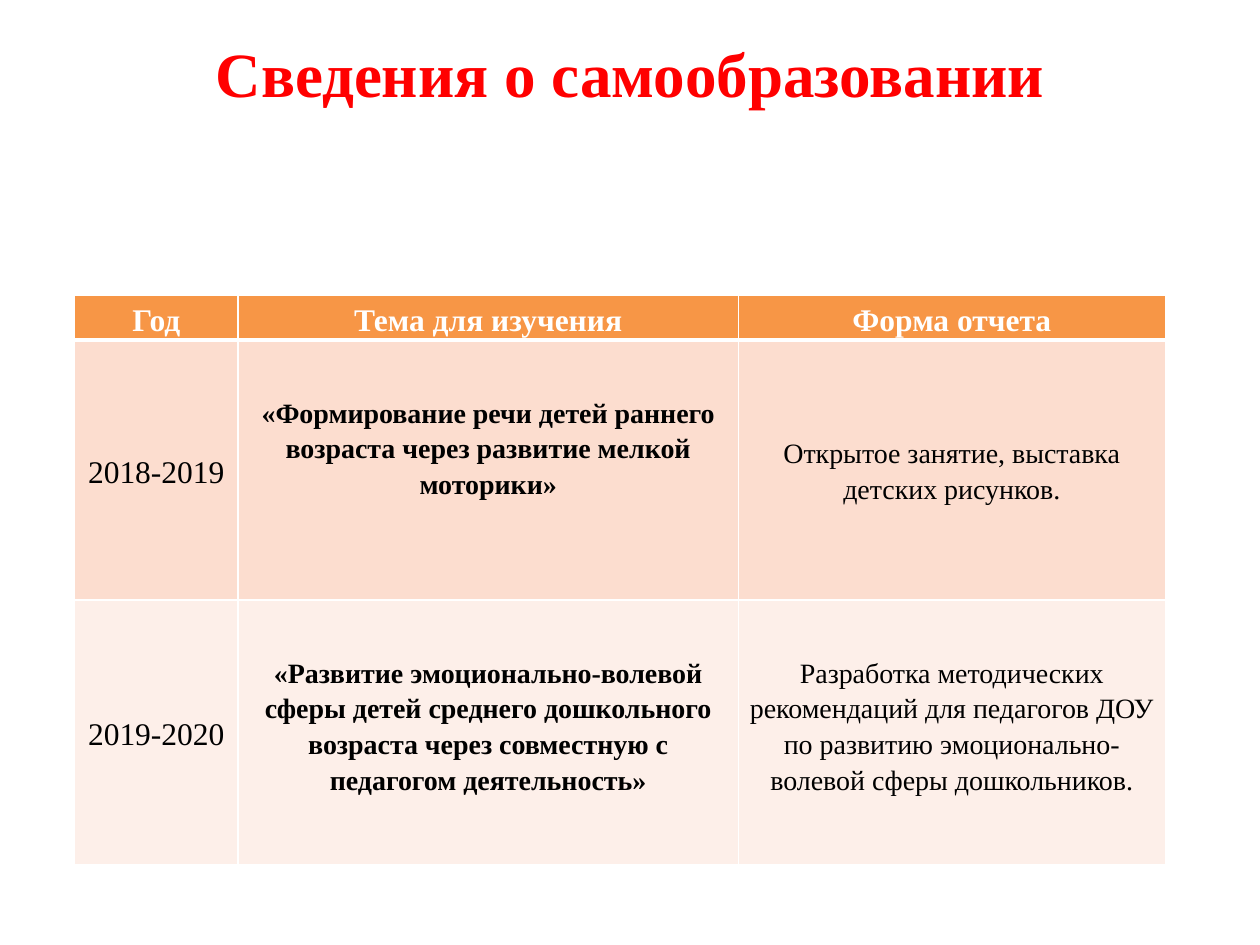
"""Build a slide with a title and a table of self-education topics."""
from dataclasses import dataclass

from pptx import Presentation
from pptx import util as u
from pptx.dml.color import RGBColor
from pptx.enum import text
from pptx.oxml import parse_xml
from pptx.oxml.ns import nsdecls


@dataclass(frozen=True)
class Theme:
    """Colours, font and type sizes of the slide."""
    font: str = "Times New Roman"
    title: str = "FF0000"
    header: str = "F79646"
    bands: tuple = ("FCDDCF", "FDEFE9")
    light: str = "FFFFFF"
    dark: str = "000000"
    title_size: int = 36
    label_size: int = 18
    body_size: int = 16


THEME = Theme()
COLUMNS = (93.6, 285.8, 244.1)
ROWS = (25.2, 148.7, 151.2)
TOP_INSET = 30.6
HEADINGS = ("Год", "Тема для изучения", "Форма отчета")
TOPICS = (
    ("2018-2019",
     "«Формирование речи детей раннего возраста через развитие мелкой моторики»",
     "Открытое занятие, выставка детских рисунков."),
    ("2019-2020",
     "«Развитие эмоционально-волевой сферы детей среднего дошкольного возраста "
     "через совместную с педагогом деятельность»",
     "Разработка методических рекомендаций для педагогов ДОУ по развитию "
     "эмоционально-волевой сферы дошкольников."),
)


def format_paragraph(p, size, color, bold):
    """Centre a paragraph and set its font."""
    p.alignment = text.PP_ALIGN.CENTER
    p.font.name = THEME.font
    p.font.size = u.Pt(size)
    p.font.bold = bold
    p.font.color.rgb = RGBColor.from_string(color)


def add_title(s, wording):
    """Place the title across the top of the slide."""
    sp = s.shapes.title
    sp.left, sp.top, sp.width, sp.height = u.Pt(0), u.Pt(0), u.Pt(720), u.Pt(82.8)
    tf = sp.text_frame
    tf.text = wording
    tf.vertical_anchor = text.MSO_ANCHOR.MIDDLE
    format_paragraph(tf.paragraphs[0], THEME.title_size, THEME.title, True)


def set_borders(cell, top, bottom):
    """Draw light borders round a cell, with the given top and bottom widths."""
    tcPr = cell._tc.get_or_add_tcPr()
    for side, width in (("L", 1), ("R", 1), ("T", top), ("B", bottom)):
        tcPr.append(parse_xml(
            f'<a:ln{side} {nsdecls("a")} w="{u.Pt(width)}"><a:solidFill>'
            f'<a:srgbClr val="{THEME.light}"/></a:solidFill></a:ln{side}>'))


def fill_cell(cell, wording, fill, size, color, bold=False, top_inset=0, rules=(1, 1)):
    """Write and format one table cell."""
    set_borders(cell, *rules)
    cell.fill.solid()
    cell.fill.fore_color.rgb = RGBColor.from_string(fill)
    cell.margin_left = cell.margin_right = u.Pt(4.5)
    cell.margin_top, cell.margin_bottom = u.Pt(top_inset), u.Pt(0)
    anchor = text.MSO_ANCHOR
    cell.vertical_anchor = anchor.TOP if top_inset else anchor.MIDDLE
    cell.text = wording
    p = cell.text_frame.paragraphs[0]
    p.line_spacing = 1.15
    format_paragraph(p, size, color, bold)


def add_topics_table(s):
    """Add the table of years, topics and report forms."""
    frame = s.shapes.add_table(len(ROWS), len(COLUMNS), u.Pt(42.5), u.Pt(169),
                               u.Pt(sum(COLUMNS)), u.Pt(sum(ROWS)))
    table = frame.table
    for column, width in zip(table.columns, COLUMNS):
        column.width = u.Pt(width)
    for row, height in zip(table.rows, ROWS):
        row.height = u.Pt(height)
    for c, heading in enumerate(HEADINGS):
        fill_cell(table.cell(0, c), heading, THEME.header, THEME.label_size,
                  THEME.light, bold=True, rules=(1, 3))
    for r, (topic, band) in enumerate(zip(TOPICS, THEME.bands), start=1):
        rules = (3 if r == 1 else 1, 1)
        year, theme, report = topic
        fill_cell(table.cell(r, 0), year, band, THEME.label_size, THEME.dark,
                  rules=rules)
        fill_cell(table.cell(r, 1), theme, band, THEME.body_size, THEME.dark,
                  bold=True, top_inset=TOP_INSET, rules=rules)
        fill_cell(table.cell(r, 2), report, band, THEME.body_size, THEME.dark,
                  top_inset=TOP_INSET if r == 2 else 0, rules=rules)


def main():
    """Build and save the slide."""
    prs = Presentation()
    prs.slide_width, prs.slide_height = u.Pt(720), u.Pt(540)
    s = prs.slides.add_slide(prs.slide_layouts[5])
    add_title(s, "Сведения о самообразовании")
    add_topics_table(s)
    prs.save("out.pptx")


if __name__ == "__main__":
    main()
